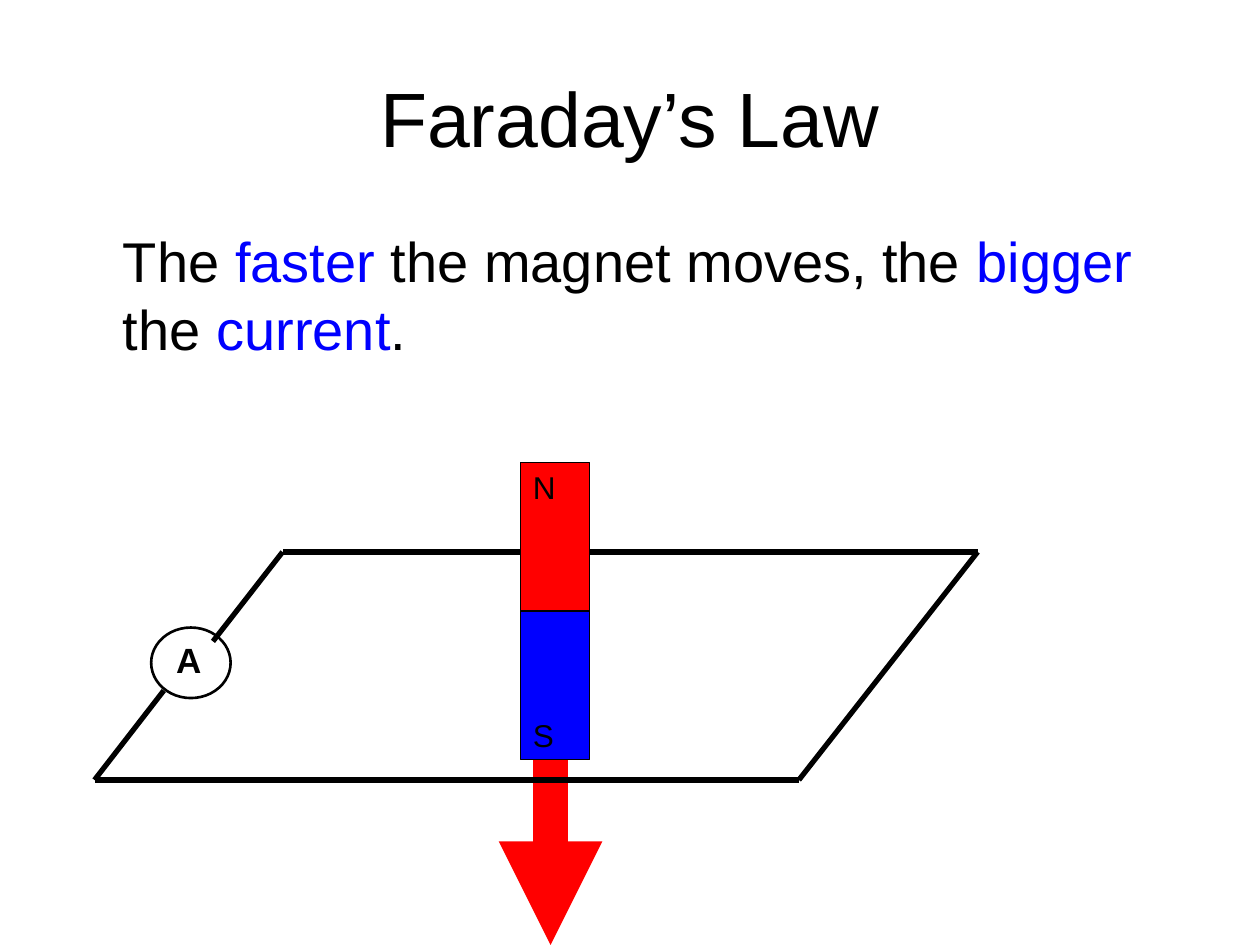
from lxml.etree import SubElement
from pptx import Presentation
from pptx.dml.color import RGBColor
from pptx.enum.shapes import MSO_CONNECTOR, MSO_SHAPE
from pptx.enum.text import MSO_ANCHOR, MSO_AUTO_SIZE, PP_ALIGN
from pptx.oxml.ns import qn
from pptx.util import Pt

BLACK, RED, BLUE = "000000", "FF0000", "0000FF"


def color(value):
    return RGBColor.from_string(value)


class SlideBuilder:
    font = "Arial"

    def __init__(self, prs):
        self.s = prs.slides.add_slide(prs.slide_layouts[1])

    def add_run(self, p, text, size, fill=BLACK, bold=False):
        r = p.add_run()
        r.text = text
        r.font.name = self.font
        r.font.size = Pt(size)
        r.font.bold = bold
        r.font.color.rgb = color(fill)

    def placeholder(self, idx, box, size, runs, align, anchor):
        sp = self.s.placeholders[idx]
        sp.left, sp.top, sp.width, sp.height = map(Pt, box)
        tf = sp.text_frame
        tf.word_wrap = True
        tf.auto_size = MSO_AUTO_SIZE.NONE
        tf.vertical_anchor = anchor
        p = tf.paragraphs[0]
        p.alignment = align
        for text, fill in runs:
            self.add_run(p, text, size, fill)
        return p

    def title(self, text, box):
        self.placeholder(0, box, 44, [(text, BLACK)],
                         PP_ALIGN.CENTER, MSO_ANCHOR.MIDDLE)

    def body(self, runs, box):
        p = self.placeholder(1, box, 32, runs, PP_ALIGN.LEFT, MSO_ANCHOR.TOP)
        pPr = p._p.get_or_add_pPr()
        pPr.set("marL", str(Pt(27)))
        pPr.set("indent", "0")
        SubElement(pPr, qn("a:buNone"))

    def shape(self, kind, box, fill=None, width=0.75):
        sp = self.s.shapes.add_shape(kind, *map(Pt, box))
        sp.shadow.inherit = False
        if fill:
            sp.fill.solid()
            sp.fill.fore_color.rgb = color(fill)
        else:
            sp.fill.background()
        sp.line.color.rgb = color(BLACK)
        sp.line.width = Pt(width)

    def label(self, text, box, size=18, bold=False):
        tf = self.s.shapes.add_textbox(*map(Pt, box)).text_frame
        tf.word_wrap = True
        tf.auto_size = MSO_AUTO_SIZE.SHAPE_TO_FIT_TEXT
        self.add_run(tf.paragraphs[0], text, size, bold=bold)

    def line(self, start, end, fill=BLACK, width=3, arrow=False):
        cxn = self.s.shapes.add_connector(
            MSO_CONNECTOR.STRAIGHT, *map(Pt, (*start, *end)))
        cxn.line.color.rgb = color(fill)
        cxn.line.width = Pt(width)
        if arrow:
            SubElement(cxn.line._get_or_add_ln(), qn("a:tailEnd"), type="triangle")
        SubElement(cxn._element.spPr, qn("a:effectLst"))


def main():
    prs = Presentation()
    prs.slide_width, prs.slide_height = Pt(720), Pt(540)
    b = SlideBuilder(prs)

    b.title("Faraday’s Law", (36, 21.6, 648, 90))
    b.body([("The ", BLACK), ("faster", BLUE), (" the magnet moves, the", BLACK),
            (" bigger ", BLUE), ("the ", BLACK), ("current", BLUE), (".", BLACK)],
           (36, 126, 648, 356.4))

    left, top, width, pole, label_h = 297.4, 264.2, 39.6, 85, 28.8
    middle, bottom = top + pole, top + 2 * pole
    b.line((314.6, bottom), (314.6, 540), RED, 19.75, arrow=True)
    b.shape(MSO_SHAPE.RECTANGLE, (left, top, width, pole), RED)
    b.shape(MSO_SHAPE.RECTANGLE, (left, middle, width, pole), BLUE)
    b.label("N", (left, top, width, label_h))
    b.label("S", (left, bottom - label_h, width, label_h))

    back, front = 315.4, 445.7
    back_left, back_right = (161.5, back), (558.7, back)
    front_left, front_right = (54, front), (456.5, front)
    for start, end in [
        ((left, back), back_left),
        ((121.7, 366.5), back_left),
        (front_right, back_right),
        (front_left, (93.6, 394.6)),
        (front_right, front_left),
        (back_right, (left + width, back)),
    ]:
        b.line(start, end)

    b.shape(MSO_SHAPE.OVAL, (86.4, 358.6, 45.4, 40.3), width=1.5)
    b.label("A", (93.6, 361.4, 45.4, 31), 20, bold=True)

    prs.save("out.pptx")


if __name__ == "__main__":
    main()
